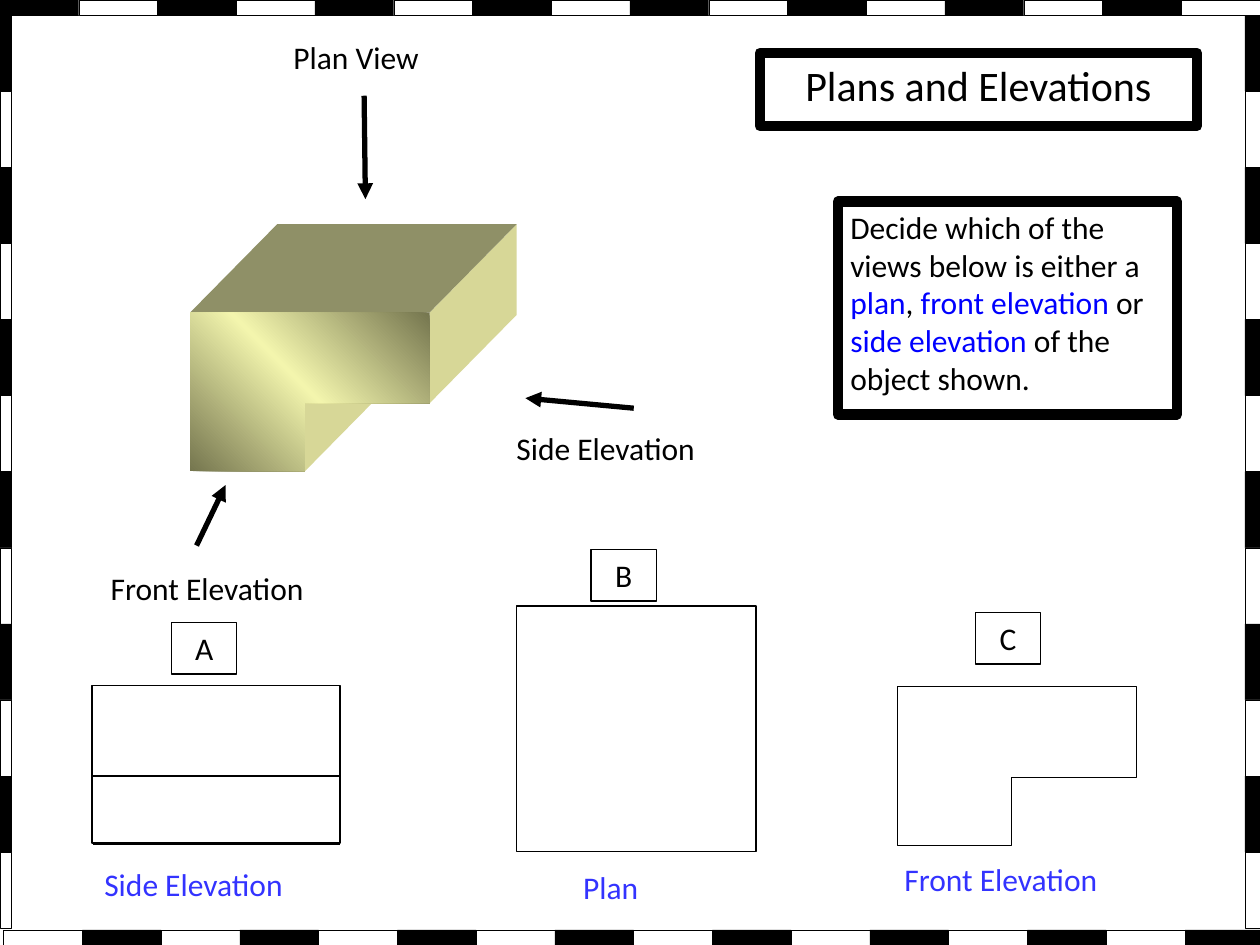
from copy import deepcopy
from lxml.etree import SubElement
from pptx import Presentation
from pptx.dml.color import RGBColor
from pptx.enum.shapes import MSO_CONNECTOR, MSO_SHAPE
from pptx.enum.text import MSO_ANCHOR, MSO_AUTO_SIZE, PP_ALIGN
from pptx.oxml.ns import qn
from pptx.util import Inches, Pt

COLUMNS, ROWS = 100, 75
BLACK, WHITE, BLUE, ANSWER = "000000", "FFFFFF", "0000FF", "3333FF"
DARK_OLIVE, PALE_YELLOW, TOP_OLIVE, SIDE_YELLOW = "75764F", "F3F5AD", "8F9067", "D7D797"


def color(value):
    return RGBColor.from_string(value)


class SlideBuilder:
    font_name = "Calibri"
    text_size = 18

    def __init__(self, presentation):
        self.slide = presentation.slides.add_slide(presentation.slide_layouts[5])
        self.shapes = self.slide.shapes
        self.column = presentation.slide_width / COLUMNS
        self.row = presentation.slide_height / ROWS

    def point(self, x, y):
        return round(x * self.column), round(y * self.row)

    def box(self, left, top, width, height):
        return *self.point(left, top), *self.point(width, height)

    def paint(self, shape, fill=None, line=None):
        shape.shadow.inherit = False
        if fill:
            shape.fill.solid()
            shape.fill.fore_color.rgb = color(fill)
        else:
            shape.fill.background()
        if line:
            shape.line.color.rgb = color(BLACK)
            shape.line.width = Pt(line)
        else:
            shape.line.fill.background()

    def add_text(self, shape, runs, size=None, align=PP_ALIGN.LEFT):
        frame = shape.text_frame
        settings = {
            "word_wrap": True,
            "auto_size": MSO_AUTO_SIZE.NONE,
            "vertical_anchor": MSO_ANCHOR.TOP,
            "margin_left": Inches(0.1),
            "margin_right": Inches(0.1),
            "margin_top": Inches(0.05),
            "margin_bottom": Inches(0.05),
        }
        for name, value in settings.items():
            setattr(frame, name, value)
        paragraph = frame.paragraphs[0]
        paragraph.alignment = align
        for text, text_color in runs:
            run = paragraph.add_run()
            run.text = text
            for name, value in {"name": self.font_name, "size": Pt(size or self.text_size)}.items():
                setattr(run.font, name, value)
            run.font.color.rgb = color(text_color)

    def title(self, text, *place):
        shape = self.shapes.title
        for name, value in zip(("left", "top", "width", "height"), self.box(*place)):
            setattr(shape, name, value)
        shape.line.color.rgb = color(BLACK)
        shape.line.width = Pt(6)
        self.add_text(shape, [(text, BLACK)], 24, PP_ALIGN.CENTER)

    def label(self, text, left, top, width, text_color=BLACK):
        shape = self.shapes.add_textbox(*self.box(left, top, width, 4))
        self.add_text(shape, [(text, text_color)])

    def rectangle(self, *place, fill=None, line=0.75):
        shape = self.shapes.add_shape(MSO_SHAPE.RECTANGLE, *self.box(*place))
        self.paint(shape, fill, line)
        return shape

    def line(self, start, end, width=0.75, arrow=False):
        connector = self.shapes.add_connector(
            MSO_CONNECTOR.STRAIGHT, *self.point(*start), *self.point(*end))
        connector.line.color.rgb = color(BLACK)
        connector.line.width = Pt(width)
        properties = connector._element.spPr
        if arrow:
            SubElement(properties.find(qn("a:ln")), qn("a:tailEnd"), type="triangle")
        SubElement(properties, qn("a:effectLst"))

    def polygon(self, points, fill=None, line=None):
        start, *others = [self.point(x, y) for x, y in points]
        builder = self.shapes.build_freeform(*start)
        builder.add_line_segments(others, close=True)
        shape = builder.convert_to_shape()
        self.paint(shape, fill, line)
        return shape

    def gradient(self, shape, edge, middle, angle):
        shape.fill.gradient()
        shape.fill.gradient_angle = angle
        stop_list = shape._element.spPr.find(qn("a:gradFill")).find(qn("a:gsLst"))
        stop_list.insert(1, deepcopy(stop_list[0]))
        for stop, position, value in zip(
                shape.fill.gradient_stops, (0, 0.5, 1), (edge, middle, edge)):
            stop.position = position
            stop.color.rgb = color(value)

    def border(self):
        tile_width, tile_height = 6.25, 6.04
        for index in range(16):
            first, second = (BLACK, WHITE) if index % 2 == 0 else (WHITE, BLACK)
            left = index * tile_width
            bottom_left = left + 0.3
            self.rectangle(left, 0, tile_width, 1.2, fill=first, line=0.25)
            self.rectangle(bottom_left, 73.8, min(tile_width, COLUMNS - bottom_left), 1.2,
                           fill=second, line=0.25)
        for index in range(12):
            fill = WHITE if index % 2 else BLACK
            for left, width in ((0, 0.9), (98.8, 1.2)):
                self.rectangle(left, 1.2 + index * tile_height, width, tile_height,
                               fill=fill, line=0.25)

    def solid(self, outline, depth):
        def extrude(start, end, fill):
            back = [(x + depth[0], y + depth[1]) for x, y in (end, start)]
            self.polygon([start, end, *back], fill)

        top_left, top_right, right_bottom, step, step_bottom, _ = outline
        extrude(step, step_bottom, SIDE_YELLOW)
        extrude(top_right, right_bottom, SIDE_YELLOW)
        extrude(top_left, top_right, TOP_OLIVE)
        self.gradient(self.polygon(outline), DARK_OLIVE, PALE_YELLOW, 45)


def step_outline(left, top):
    offsets = ((0, 0), (19, 0), (19, 7.2), (9.1, 7.2), (9.1, 12.6), (0, 12.6))
    return [(left + x, top + y) for x, y in offsets]


def main():
    presentation = Presentation()
    presentation.slide_width, presentation.slide_height = Inches(10), Inches(7.5)
    builder = SlideBuilder(presentation)

    builder.title("Plans and Elevations", 60.3, 4.2, 34.7, 5.8)
    task = builder.rectangle(66.5, 16, 26.9, 16.9, line=6)
    builder.add_text(task, [
        ("Decide which of the views below is either a ", BLACK), ("plan", BLUE), (", ", BLACK),
        ("front elevation", BLUE), (" or ", BLACK), ("side elevation", BLUE),
        (" of the object shown.", BLACK)])

    builder.border()
    builder.solid(step_outline(15.1, 24.8), (6.9, -7))

    for text, left, top, width, start, end in (
            ("Plan View", 22.3, 2.5, 14, (28.9, 7.6), (29, 15.8)),
            ("Side Elevation", 40, 33.6, 19.5, (50.3, 32.4), (41.7, 31.6)),
            ("Front Elevation", 7.8, 44.7, 19.5, (15.6, 43.3), (17.9, 38.5))):
        builder.label(text, left, top, width)
        builder.line(start, end, 3, arrow=True)

    builder.rectangle(7.3, 54.4, 19.7, 12.5)
    for y in (61.6, 67):
        builder.line((7.4, y), (27, y))
    builder.rectangle(41, 48.1, 19, 19.5)
    builder.polygon(step_outline(71.2, 54.5), line=0.25)

    for letter, left, top, answer, answer_left, answer_top in (
            ("A", 13.6, 49.4, "Side Elevation", 7.3, 68.2),
            ("B", 46.9, 43.6, "Plan", 45.3, 68.4),
            ("C", 77.4, 48.6, "Front Elevation", 70.8, 67.8)):
        letter_box = builder.rectangle(left, top, 5.2, 4.1)
        builder.add_text(letter_box, [(letter, BLACK)], align=PP_ALIGN.CENTER)
        builder.label(answer, answer_left, answer_top, 22.3, ANSWER)

    presentation.save("out.pptx")


if __name__ == "__main__":
    main()
